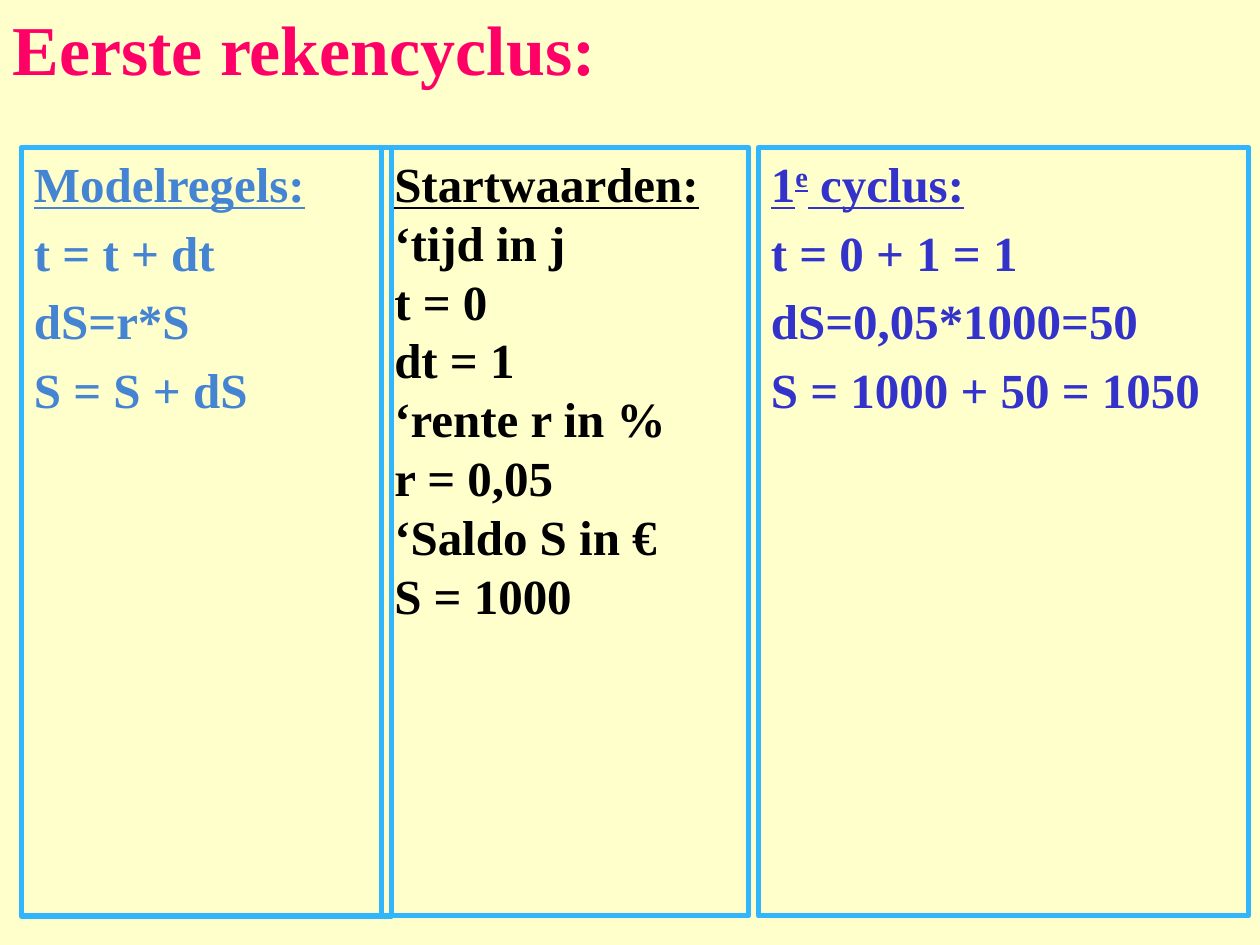
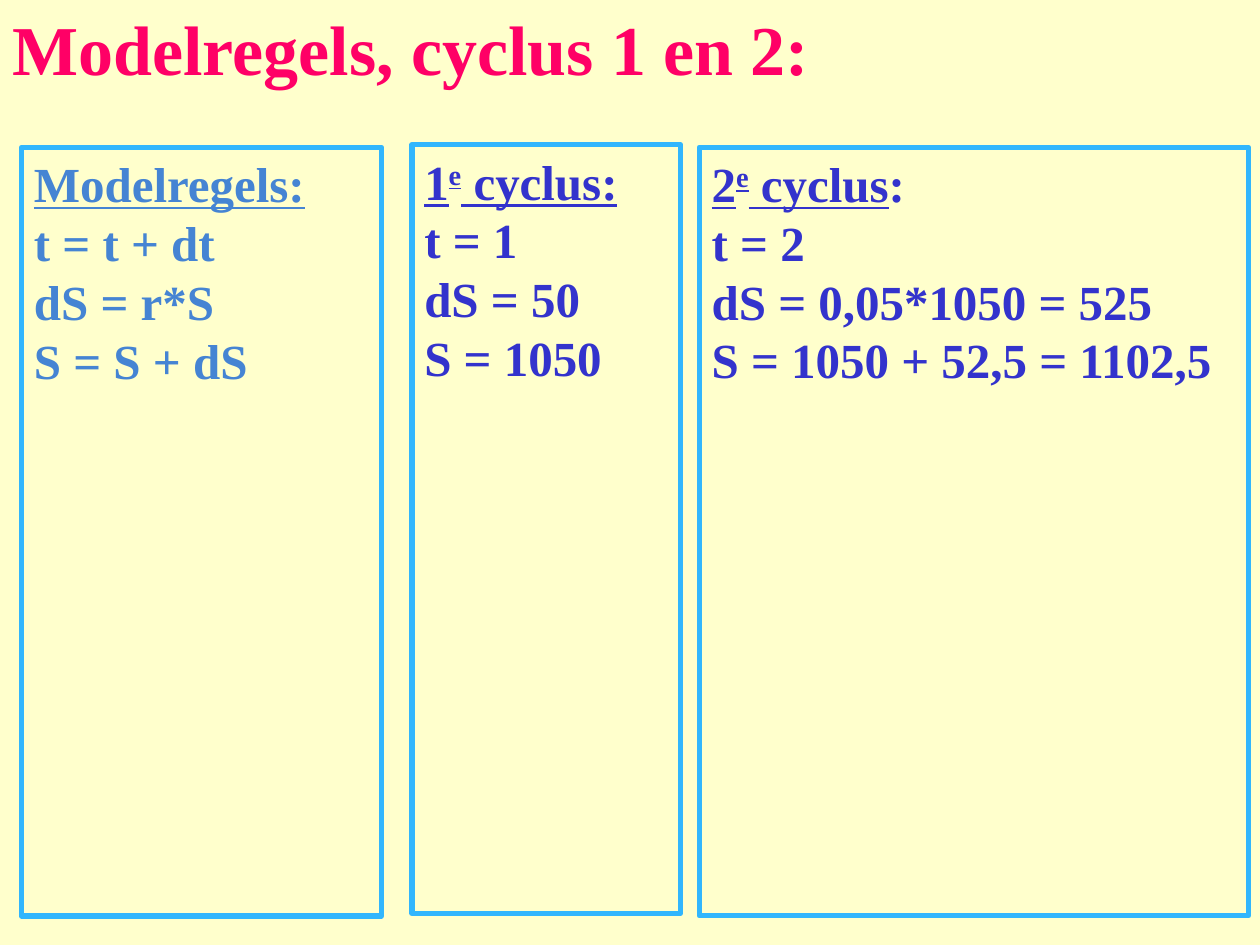
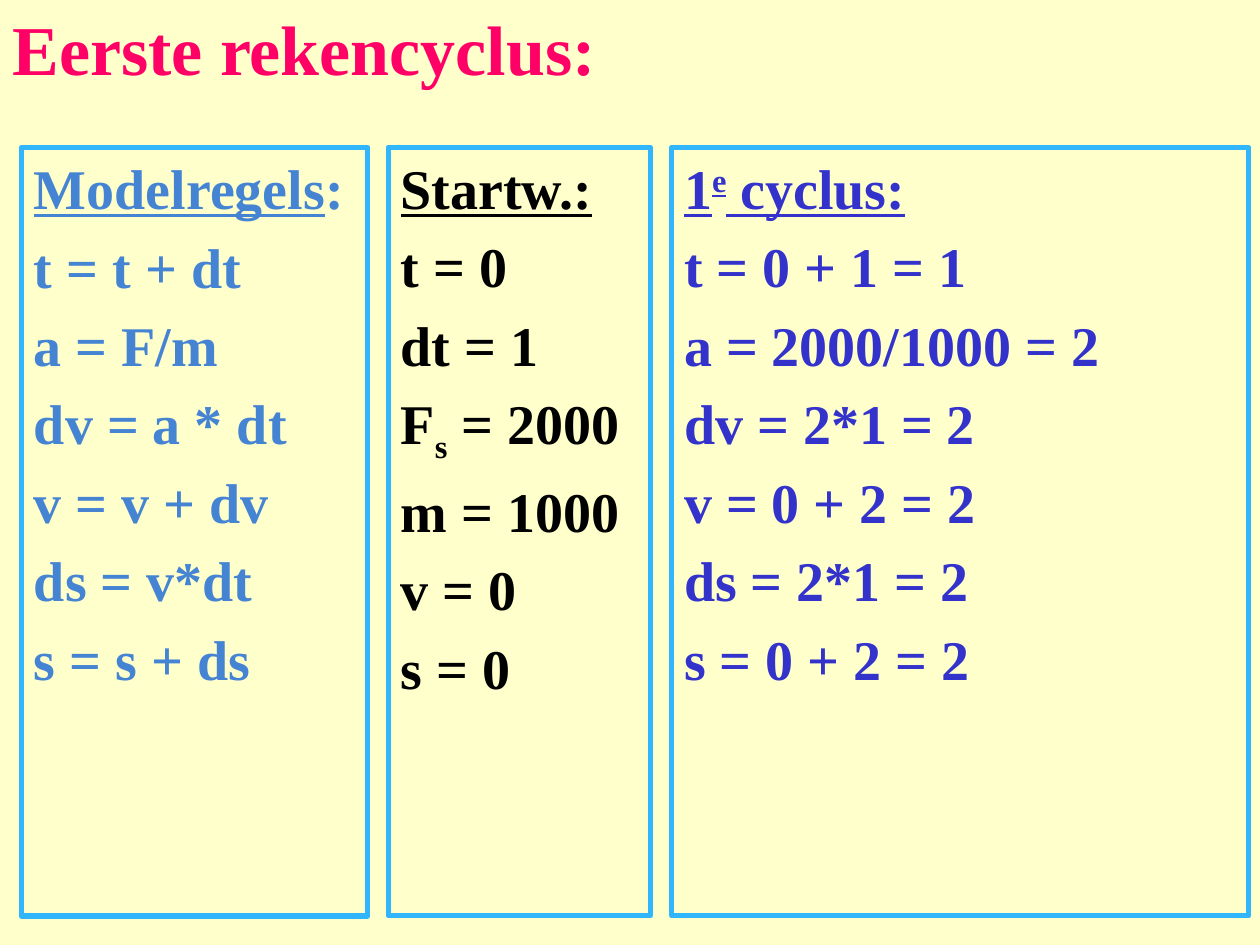
from pptx import Presentation
from pptx.dml.color import RGBColor
from pptx.enum.shapes import MSO_SHAPE as Shape
from pptx.enum.text import MSO_ANCHOR as Anchor, MSO_AUTO_SIZE as AutoSize, PP_ALIGN as Align
from pptx.util import Pt

FONT = "Times New Roman"
PAPER, PINK, FRAME = "FFFFCC", "FF0066", "31B6FD"
RULES, START, CYCLE = "4584D3", "000000", "3333CC"
LEFT, TOP, RIGHT, HEIGHT = 12.2, 84.2, 713.5, 439.2


def color(value):
    return RGBColor.from_string(value)


def under(text):
    """A span with underline."""
    return text, {"underline": True}


def cycle_heading(number, text=" cyclus:"):
    return [under(number), ("e", {"underline": True, "baseline": 30}), under(text)]


class Lesson:
    """Holds the shared style and the current page."""

    def __init__(self):
        self.deck = Presentation()
        self.deck.slide_width, self.deck.slide_height = Pt(720), Pt(540)
        fill = self.deck.slide_master.background.fill
        fill.solid()
        fill.fore_color.rgb = color(PAPER)
        self.page = None

    def add_page(self, title):
        self.page = self.deck.slides.add_slide(self.deck.slide_layouts[0])
        box = self.page.shapes.title
        self.place(box, 0, 0, 612, 54)
        self.fill_text(box, [title], Anchor.MIDDLE, 40, PINK)

    def place(self, box, left, top, width, height):
        places = {"left": left, "top": top, "width": width, "height": height}
        for name, value in places.items():
            setattr(box, name, Pt(value))

    def fill_text(self, box, lines, anchor, size, ink, spacing=0.0):
        """Fill a box; each line is a string or a list of spans."""
        frame = box.text_frame
        settings = {"word_wrap": True, "auto_size": AutoSize.NONE, "vertical_anchor": anchor}
        for name, value in settings.items():
            setattr(frame, name, value)
        for index, line in enumerate(lines):
            para = frame.add_paragraph() if index else frame.paragraphs[0]
            para.alignment = Align.LEFT
            para.space_before = Pt(spacing * size)
            for part in [line] if isinstance(line, str) else line:
                text, style = (part, {}) if isinstance(part, str) else part
                self.add_text(para, text, size, ink, style)

    def add_text(self, para, text, size, ink, style):
        for index, piece in enumerate(text.split("\n")):
            if index:
                para.add_line_break()
            if not piece:
                continue
            span = para.add_run()
            span.text = piece
            look = {"name": FONT, "size": Pt(size), "bold": True,
                    "underline": style.get("underline", False)}
            for name, value in look.items():
                setattr(span.font, name, value)
            span.font.color.rgb = color(ink)
            if "baseline" in style:
                span._r.get_or_add_rPr().set("baseline", str(style["baseline"] * 1000))

    def panel(self, box, left, width, lines, ink, size=28, spacing=0.2, top=TOP):
        self.place(box, left, top, width, HEIGHT)
        box.fill.background()
        box.line.color.rgb = color(FRAME)
        box.line.width = Pt(3)
        self.fill_text(box, lines, Anchor.TOP, size, ink, spacing)

    def rules(self, width, lines, **options):
        self.panel(self.page.placeholders[1], LEFT, width, lines, RULES, **options)

    def column(self, left, width, lines, ink, **options):
        box = self.page.shapes.add_shape(Shape.RECTANGLE, 0, 0, 0, 0)
        box.shadow.inherit = False
        self.panel(box, left, width, lines, ink, **options)

    def last_column(self, left, lines, **options):
        self.column(left, RIGHT - left, lines, CYCLE, **options)


def main():
    lesson = Lesson()

    # Savings account: first cycle
    lesson.add_page("Eerste rekencyclus:")
    lesson.rules(211.7, [[under("Modelregels:")], "t = t + dt", "dS=r*S", "S = S + dS"])
    lesson.column(218.2, 209.5, [
        [under("Startwaarden:")], "‘tijd in j", "t = 0", "dt = 1", "‘rente r in %",
        "r = 0,05", "‘Saldo S in €", "S = 1000"], START, spacing=0)
    lesson.last_column(433.4, [
        cycle_heading("1"), "t = 0 + 1 = 1", "dS=0,05*1000=50", "S = 1000 + 50 = 1050"])

    # Savings account: first and second cycle
    lesson.add_page("Modelregels, cyclus 1 en 2:")
    lesson.rules(205.9, [[under("Modelregels:\n"), "t = t + dt\ndS = r*S\nS = S + dS"]])
    lesson.column(235.4, 153.4, [
        cycle_heading("1"), "t = 1", "dS = 50", "S = 1050"], CYCLE, spacing=0, top=82.8)
    lesson.last_column(399.6, [
        cycle_heading("2", " cyclus")
        + [":\nt = 2\ndS = 0,05*1050 = 525\nS = 1050 + 52,5 = 1102,5"]])

    # Motion under a force: first cycle
    lesson.add_page("Eerste rekencyclus:")
    lesson.rules(198, [
        [under("Modelregels"), ":"], "t = t + dt", "a = F/m", "dv = a * dt",
        "v = v + dv", "ds = v*dt", "s = s + ds"], size=32)
    lesson.column(221.8, 149.8, [
        [under("Startw.:")], "t = 0", "dt = 1", ["F", ("s", {"baseline": -25}), " = 2000"],
        "m = 1000", "v = 0", "s = 0"], START, size=32)
    lesson.last_column(383.8, [
        cycle_heading("1"), "t = 0 + 1 = 1", "a = 2000/1000 = 2", "dv = 2*1 = 2",
        "v = 0 + 2 = 2", "ds = 2*1 = 2", "s = 0 + 2 = 2"], size=32)

    lesson.deck.save("out.pptx")


if __name__ == "__main__":
    main()
